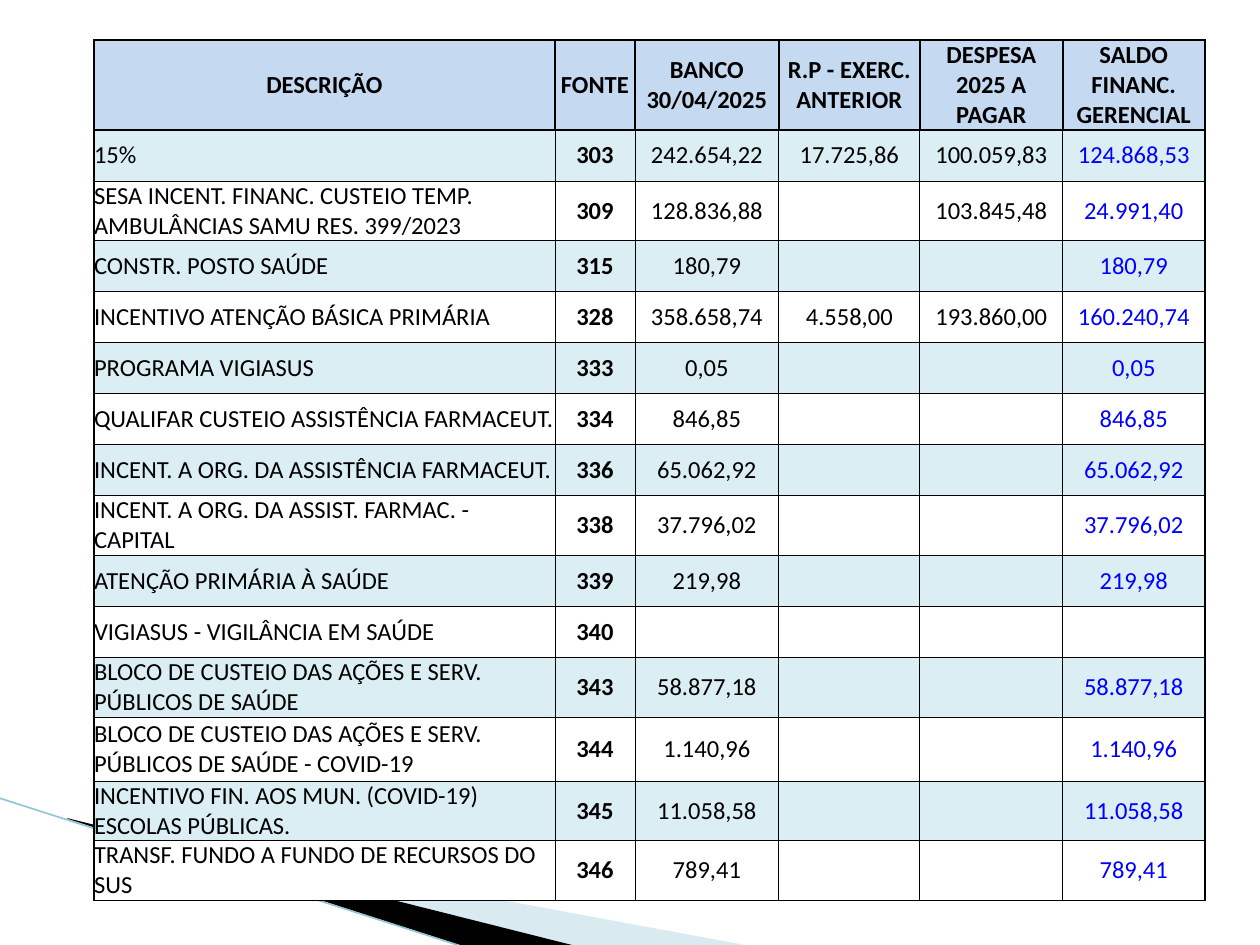
from typing import NamedTuple

from lxml.etree import SubElement
from pptx import Presentation
from pptx.dml.color import RGBColor
from pptx.enum.shapes import MSO_CONNECTOR as Connector
from pptx.enum.text import MSO_ANCHOR as Anchor, PP_ALIGN as Align
from pptx.oxml.ns import qn
from pptx.util import Pt

PX = 914400 // 126  # EMU in one px

BLACK, BLUE, WHITE = "000000", "0000FF", "FFFFFF"
HEADER_FILL, BAND_FILL = "C5D9F1", "DAEEF3"
THIN, THICK = 0.5, 1


class Ribbon(NamedTuple):
    points: list[tuple[int, int]]
    fill: str
    opacity: int  # percent


class Account(NamedTuple):
    description: str
    source: str
    bank: str = ""
    carried: str = ""
    payable: str = ""
    balance: str = ""
    height: int = 51


RIBBONS = [
    Ribbon([(69, 820), (750, 946), (575, 946), (69, 819)], "A0CBDC", 40),
    Ribbon([(67, 818), (576, 946), (469, 948), (68, 819)], BLACK, 100),
]

COLUMN_WIDTHS = [461, 80, 144, 141, 143, 142]
HEADER_HEIGHT = 90
HEADERS = ["DESCRIÇÃO", "FONTE", "BANCO 30/04/2025", "R.P - EXERC. ANTERIOR",
           "DESPESA 2025 A PAGAR", "SALDO FINANC. GERENCIAL"]
ACCOUNTS = [
    Account("15%", "303", "242.654,22", "17.725,86", "100.059,83", "124.868,53"),
    Account("SESA INCENT. FINANC. CUSTEIO TEMP. AMBULÂNCIAS SAMU RES. 399/2023",
            "309", "128.836,88", "", "103.845,48", "24.991,40", 59),
    Account("CONSTR. POSTO SAÚDE", "315", "180,79", balance="180,79"),
    Account("INCENTIVO ATENÇÃO BÁSICA PRIMÁRIA", "328",
            "358.658,74", "4.558,00", "193.860,00", "160.240,74"),
    Account("PROGRAMA VIGIASUS", "333", "0,05", balance="0,05"),
    Account("QUALIFAR CUSTEIO ASSISTÊNCIA FARMACEUT.", "334", "846,85", balance="846,85"),
    Account("INCENT. A ORG. DA ASSISTÊNCIA FARMACEUT.", "336",
            "65.062,92", balance="65.062,92"),
    Account("INCENT. A ORG. DA ASSIST. FARMAC. - CAPITAL", "338",
            "37.796,02", balance="37.796,02", height=59),
    Account("ATENÇÃO PRIMÁRIA À SAÚDE", "339", "219,98", balance="219,98"),
    Account("VIGIASUS - VIGILÂNCIA EM SAÚDE", "340"),
    Account("BLOCO DE CUSTEIO DAS AÇÕES E SERV. PÚBLICOS DE SAÚDE", "343",
            "58.877,18", balance="58.877,18", height=59),
    Account("BLOCO DE CUSTEIO DAS AÇÕES E SERV. PÚBLICOS DE SAÚDE - COVID-19", "344",
            "1.140,96", balance="1.140,96", height=64),
    Account("INCENTIVO FIN. AOS MUN. (COVID-19) ESCOLAS PÚBLICAS.", "345",
            "11.058,58", balance="11.058,58", height=59),
    Account("TRANSF. FUNDO A FUNDO DE RECURSOS DO SUS", "346",
            "789,41", balance="789,41", height=59),
]


def color(value: str) -> RGBColor:
    return RGBColor.from_string(value)


def fill_solid(item, value: str) -> None:
    item.fill.solid()
    item.fill.fore_color.rgb = color(value)


def set_values(item, values: dict) -> None:
    for name, value in values.items():
        setattr(item, name, value)


def draw_ribbon(slide, ribbon: Ribbon) -> None:
    builder = slide.shapes.build_freeform(*ribbon.points[0], scale=PX)
    builder.add_line_segments(ribbon.points[1:], close=True)
    shape = builder.convert_to_shape()
    shape.shadow.inherit = False
    fill_solid(shape, ribbon.fill)
    shape.line.fill.background()
    if ribbon.opacity < 100:
        tone = shape.fill._xPr.find(".//" + qn("a:srgbClr"))
        SubElement(tone, qn("a:alpha"), val=str(ribbon.opacity * 1000))


def draw_line(slide, start: tuple[int, int], end: tuple[int, int],
              value: str, width: float) -> None:
    ends = [length * PX for length in start + end]
    line = slide.shapes.add_connector(Connector.STRAIGHT, *ends)
    line.line.color.rgb = color(value)
    line.line.width = Pt(width)
    SubElement(line._element.spPr, qn("a:effectLst"))


def set_borders(cell, widths: dict[str, float]) -> None:
    properties = cell._tc.get_or_add_tcPr()
    for position, (side, width) in enumerate(widths.items()):
        edge = SubElement(properties, qn("a:ln" + side), w=str(Pt(width)))
        properties.insert(position, edge)  # borders come before the fill
        solid = SubElement(edge, qn("a:solidFill"))
        SubElement(solid, qn("a:srgbClr"), val=BLACK)


def draw_cell(cell, text: str, row: int, column: int) -> None:
    header = row == 0
    last = len(COLUMN_WIDTHS) - 1
    set_values(cell, dict(margin_left=0, margin_right=0, margin_top=0, margin_bottom=0,
                          vertical_anchor=Anchor.MIDDLE))
    fill_solid(cell, HEADER_FILL if header else BAND_FILL if row % 2 else WHITE)
    set_borders(cell, {
        "L": THICK if header or column == 0 else THIN,
        "R": THICK if header or column == last else THIN,
        "T": THICK if row <= 1 else THIN,
        "B": THICK if header else THIN,
    })
    paragraph = cell.text_frame.paragraphs[0]
    paragraph.alignment = Align.LEFT if column == 0 and not header else Align.CENTER
    if text:
        run = paragraph.add_run()
        run.text = text
        set_values(run.font, dict(name="Calibri", size=Pt(14), bold=header or column == 1))
        run.font.color.rgb = color(BLUE if column == last and not header else BLACK)
    else:
        paragraph.font.size = Pt(14)


def draw_table(slide, left: int, top: int) -> None:
    heights = [HEADER_HEIGHT] + [account.height for account in ACCOUNTS]
    rows = [HEADERS] + [account[:len(HEADERS)] for account in ACCOUNTS]
    box = [length * PX for length in (left, top, sum(COLUMN_WIDTHS), sum(heights))]
    table = slide.shapes.add_table(len(rows), len(HEADERS), *box).table
    set_values(table, dict(first_row=False, horz_banding=False))
    for column, width in zip(table.columns, COLUMN_WIDTHS):
        column.width = width * PX
    for row, height in zip(table.rows, heights):
        row.height = height * PX
    for row, texts in enumerate(rows):
        for column, text in enumerate(texts):
            draw_cell(table.cell(row, column), text, row, column)


def main() -> None:
    presentation = Presentation()
    set_values(presentation, dict(slide_width=1260 * PX, slide_height=945 * PX))
    slide = presentation.slides.add_slide(presentation.slide_layouts[6])

    # Ribbons at the bottom left
    for ribbon in RIBBONS:
        draw_ribbon(slide, ribbon)
    draw_line(slide, (-1, 798), (467, 948), "97C5D8", 0.95)

    # Balance of each funding source
    draw_table(slide, 94, 40)

    presentation.save("out.pptx")


if __name__ == "__main__":
    main()
